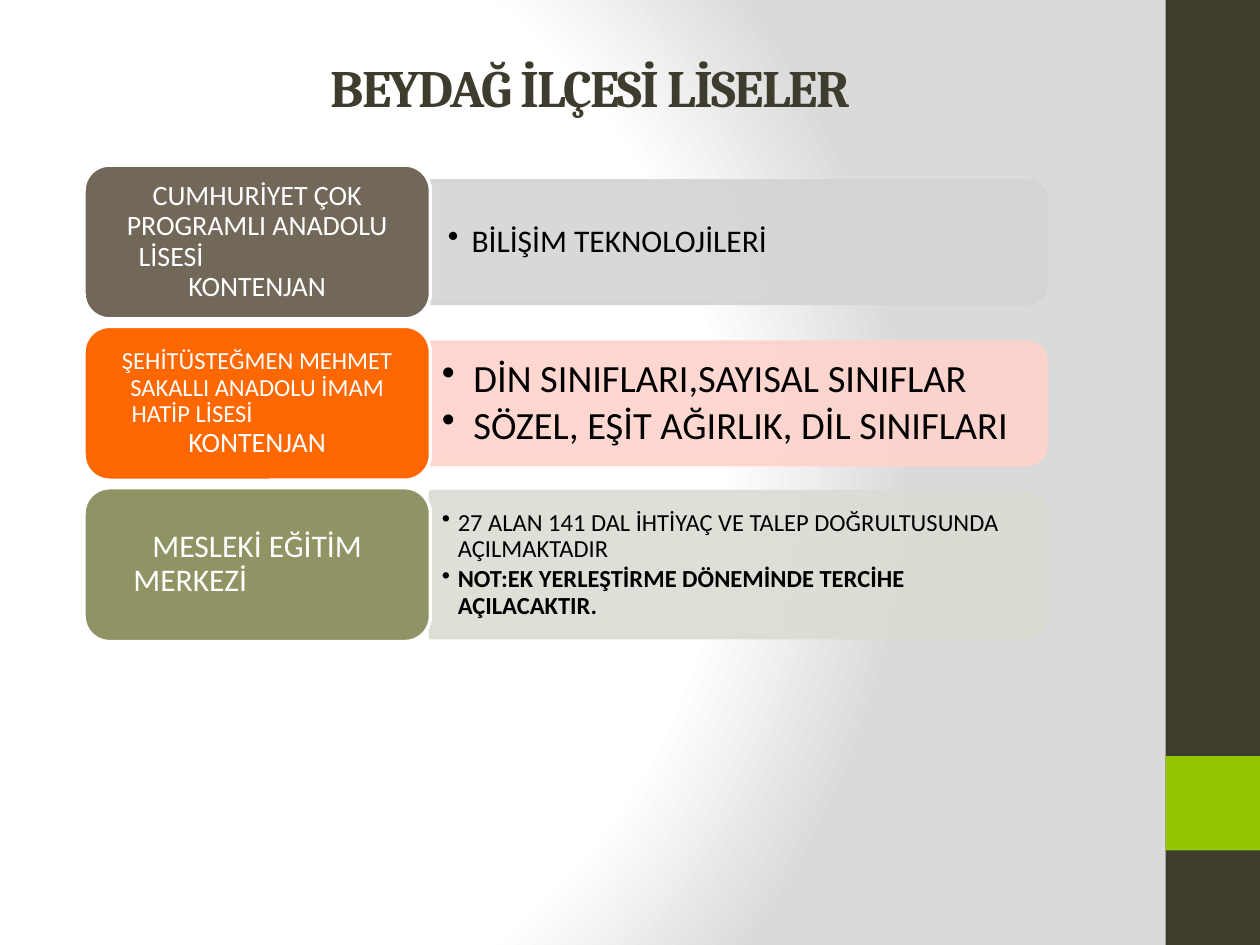
import pptx
import pptx.dml.color
import pptx.enum.shapes
import pptx.enum.text
import pptx.oxml
import pptx.oxml.ns
import pptx.util
from lxml import etree

Pt = pptx.util.Pt
SHAPES = pptx.enum.shapes.MSO_SHAPE
ALIGN = pptx.enum.text.PP_ALIGN
MIDDLE = pptx.enum.text.MSO_ANCHOR.MIDDLE
qn = pptx.oxml.ns.qn

LABEL_LEFT, LABEL_TOP, LABEL_WIDTH, LABEL_HEIGHT = 48, 94.3, 198, 88
ROW_PITCH = 92.2
BAR_LEFT, BAR_WIDTH = LABEL_LEFT + LABEL_WIDTH, 352
TEXT_WIDTH = 348.5

# Label lines: (text, size, left indent), where an indent of None means centred
# Bar items: (text, bold)
ROWS = [
    {"label_color": "71685A", "bar_color": "D5D4D2", "bar_height": 70,
     "label": [("CUMHURİYET ÇOK PROGRAMLI ANADOLU", 16, None),
               ("LİSESİ", 16, 22), ("KONTENJAN", 16, None)],
     "items": [("BİLİŞİM TEKNOLOJİLERİ", False)],
     "size": 18, "indent": 13.5, "inset": 10},
    {"label_color": "FF6700", "bar_color": "FFD3CC", "bar_height": 70,
     "label": [("ŞEHİTÜSTEĞMEN MEHMET SAKALLI ANADOLU İMAM", 14, None),
               ("HATİP LİSESİ", 14, 18), ("KONTENJAN", 16, None)],
     "items": [("DİN SINIFLARI,SAYISAL SINIFLAR", False),
               ("SÖZEL, EŞİT AĞIRLIK, DİL SINIFLARI", False)],
     "size": 22, "indent": 18, "inset": 6.6},
    {"label_color": "909465", "bar_color": "DBDCD3", "bar_height": 83.5,
     "label": [("MESLEKİ EĞİTİM", 18, None), ("MERKEZİ", 18, 19)],
     "items": [("27 ALAN 141 DAL İHTİYAÇ VE TALEP DOĞRULTUSUNDA AÇILMAKTADIR", False),
               ("NOT:EK YERLEŞTİRME DÖNEMİNDE TERCİHE AÇILACAKTIR.", True)],
     "size": 14, "indent": 9, "inset": 6.6},
]


def color(hex_text):
    return pptx.dml.color.RGBColor.from_string(hex_text)


def set_values(target, values):
    for name, value in values.items():
        setattr(target, name, value)


def set_background(page):
    """Circular gradient from white to light grey."""
    fill = page.background.fill
    fill.solid()
    solid = page.background._cSld.find(".//" + qn("a:solidFill"))
    stops = "".join(
        f'<a:gs pos="{position * 1000}"><a:srgbClr val="{shade}"/></a:gs>'
        for position, shade in [(0, "FFFFFF"), (75, "FFFFFF"), (100, "DADADA")])
    gradient = pptx.oxml.parse_xml(
        f'<a:gradFill {pptx.oxml.ns.nsdecls("a")} rotWithShape="1">'
        f'<a:gsLst>{stops}</a:gsLst><a:path path="circle">'
        '<a:fillToRect l="20000" t="50000" r="100000" b="50000"/>'
        '</a:path></a:gradFill>')
    solid.getparent().replace(solid, gradient)


def add_block(page, kind, place, fill, line=None, opacity=None):
    box = page.shapes.add_shape(kind, *map(Pt, place))
    box.shadow.inherit = False
    box.fill.solid()
    box.fill.fore_color.rgb = color(fill)
    if line:
        box.line.color.rgb = color(line)
        box.line.width = Pt(2)
    else:
        box.line.fill.background()
    if opacity:
        for shade in box._element.spPr.iter(qn("a:srgbClr")):
            etree.SubElement(shade, qn("a:alpha"), val=str(opacity * 1000))
    return box


def add_text_box(page, place):
    return page.shapes.add_textbox(*map(Pt, place))


def set_frame(box, side, edge):
    frame = box.text_frame
    set_values(frame, {"word_wrap": True, "vertical_anchor": MIDDLE,
                       "margin_left": Pt(side), "margin_right": Pt(side),
                       "margin_top": Pt(edge), "margin_bottom": Pt(edge)})
    return frame


def add_para(frame, text, font, layout):
    """Fill the empty first paragraph, or append a new one."""
    para = frame.paragraphs[0]
    if para.runs:
        para = frame.add_paragraph()
    set_values(para, layout)
    span = para.add_run()
    span.text = text
    rgb = font.pop("rgb")
    set_values(span.font, font)
    span.font.color.rgb = color(rgb)
    return para, span


def indent_para(para, left, first=0, bullet=None):
    properties = para._p.get_or_add_pPr()
    properties.set("marL", str(Pt(left)))
    properties.set("indent", str(Pt(first)))
    if bullet:
        etree.SubElement(properties, qn("a:buChar"), char=bullet)


def add_title(page):
    frame = set_frame(add_text_box(page, (37.4, 21.6, 600, 55.4)), 7.2, 3.6)
    font = {"name": "Cambria", "size": Pt(30), "bold": True, "rgb": "3E3D2D"}
    _, span = add_para(frame, "BEYDAĞ İLÇESİ LİSELER", font,
                       {"alignment": ALIGN.CENTER})
    span._r.get_or_add_rPr().set("spc", "-100")


def add_bar(page, row, middle):
    # The shape stands upright and is turned so its round corners face right
    height = row["bar_height"]
    place = (BAR_LEFT + (BAR_WIDTH - height) / 2, middle - BAR_WIDTH / 2,
             height, BAR_WIDTH)
    bar = add_block(page, SHAPES.ROUND_2_SAME_RECTANGLE, place,
                    row["bar_color"], row["bar_color"], opacity=90)
    bar.rotation = 90


def add_items(page, row, middle):
    height = row["bar_height"] - 7
    box = add_text_box(page, (BAR_LEFT, middle - height / 2, TEXT_WIDTH, height))
    frame = set_frame(box, row["inset"], row["inset"] / 2)
    for text, bold in row["items"]:
        font = {"name": "Calibri", "size": Pt(row["size"]), "bold": bold,
                "rgb": "000000"}
        para, _ = add_para(frame, text, font, {
            "line_spacing": 0.9, "space_after": Pt(0.15 * row["size"])})
        indent_para(para, row["indent"], -row["indent"], "•")


def add_label(page, row, top):
    place = (LABEL_LEFT, top, LABEL_WIDTH, LABEL_HEIGHT)
    label = add_block(page, SHAPES.ROUNDED_RECTANGLE, place,
                      row["label_color"], "FFFFFF")
    frame = set_frame(label, 5, 2)
    for text, size, indent in row["label"]:
        font = {"name": "Calibri", "size": Pt(size), "rgb": "FFFFFF"}
        centred = indent is None
        para, _ = add_para(frame, text, font, {
            "alignment": ALIGN.CENTER if centred else ALIGN.LEFT,
            "line_spacing": 0.9})
        if not centred:
            indent_para(para, indent)


def main():
    deck = pptx.Presentation()
    set_values(deck, {"slide_width": Pt(720), "slide_height": Pt(540)})
    page = deck.slides.add_slide(deck.slide_layouts[6])
    set_background(page)

    # Side band with its accent
    add_block(page, SHAPES.RECTANGLE, (666, 0, 54, 540), "3E3D2D")
    add_block(page, SHAPES.RECTANGLE, (666, 432, 54, 54), "94C600")

    add_title(page)

    # One row for each school
    for index, row in enumerate(ROWS):
        top = LABEL_TOP + index * ROW_PITCH
        middle = top + LABEL_HEIGHT / 2
        add_bar(page, row, middle)
        add_items(page, row, middle)
        add_label(page, row, top)

    deck.save("out.pptx")


if __name__ == "__main__":
    main()
